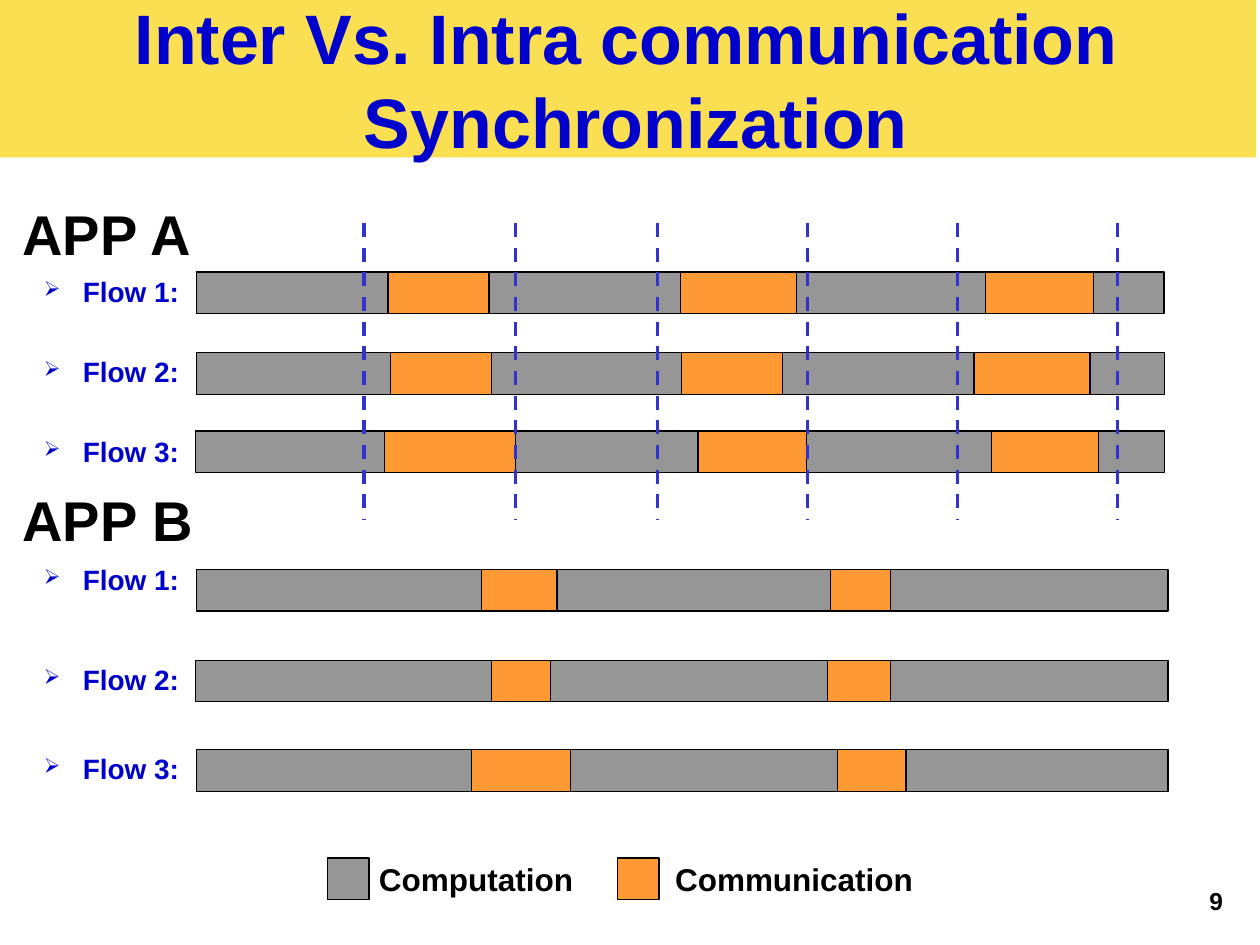
"""Build a slide comparing communication timing across two applications."""
from itertools import pairwise

from lxml import etree
from pptx import Presentation
from pptx.dml.color import RGBColor
from pptx.enum import dml, shapes, text
from pptx.oxml import ns
from pptx.util import Inches, Pt

BLACK = RGBColor(0x00, 0x00, 0x00)
BLUE = RGBColor(0x00, 0x00, 0xCC)
DASH_BLUE = RGBColor(0x33, 0x33, 0xCC)
YELLOW = RGBColor(0xFB, 0xDF, 0x53)
GREY = RGBColor(0x96, 0x96, 0x96)
ORANGE = RGBColor(0xFF, 0x99, 0x33)
BAR_HEIGHT = 0.33

deck = Presentation()
deck.slide_width, deck.slide_height = Inches(10), Inches(7.5)
page = deck.slides.add_slide(deck.slide_layouts[6])


def add_block(left, top, width, height, color, outlined=True):
    block = page.shapes.add_shape(
        shapes.MSO_SHAPE.RECTANGLE, Inches(left), Inches(top), Inches(width), Inches(height))
    block.shadow.inherit = False
    block.fill.solid()
    block.fill.fore_color.rgb = color
    if outlined:
        block.line.color.rgb = BLACK
        block.line.width = Pt(0.75)
    else:
        block.line.fill.background()
    return block


def add_span(para, words, size, color=BLACK):
    span = para.add_run()
    span.text = words
    span.font.name = "Arial"
    span.font.size = Pt(size)
    span.font.bold = True
    span.font.color.rgb = color


banner = add_block(-0.03, 0, 10, 1.25, YELLOW, outlined=False)
banner.text_frame.word_wrap = True
banner.text_frame.vertical_anchor = text.MSO_ANCHOR.MIDDLE
title = banner.text_frame.paragraphs[0]
title.alignment = text.PP_ALIGN.CENTER
add_span(title, "Inter Vs. Intra communication", 40, BLUE)
title.add_line_break()
add_span(title, " Synchronization", 40, BLUE)

flow_edges = {
    2.16: [1.56, 3.08, 3.88, 5.4, 6.32, 7.82, 8.68, 9.24],
    2.8: [1.56, 3.1, 3.9, 5.41, 6.21, 7.73, 8.65, 9.24],
    3.42: [1.55, 3.05, 4.09, 5.54, 6.4, 7.87, 8.72, 9.24],
    4.52: [1.56, 3.82, 4.42, 6.59, 7.07, 9.27],
    5.24: [1.55, 3.9, 4.37, 6.57, 7.07, 9.27],
    5.95: [1.56, 3.74, 4.53, 6.65, 7.19, 9.27],
}
for top, edges in flow_edges.items():
    for index, (start, end) in enumerate(pairwise(edges)):
        add_block(start, top, end - start, BAR_HEIGHT, ORANGE if index % 2 else GREY)

app_box = page.shapes.add_textbox(Inches(0.08), Inches(1.5), Inches(8.33), Inches(5.25))
app_frame = app_box.text_frame
app_frame.word_wrap = True
app_frame.margin_top = Inches(0.08)
app_a = app_frame.paragraphs[0]
add_span(app_a, "APP A", 32)
app_b = app_frame.add_paragraph()
app_b.space_before = Pt(125.5)
add_span(app_b, "APP B", 32)

flow_box = page.shapes.add_textbox(Inches(-0.25), Inches(2.13), Inches(2), Inches(5.25))
flow_frame = flow_box.text_frame
flow_frame.word_wrap = True
for index, gap in enumerate([0, 26.5, 26.5, 54.2, 37.6, 31.9]):
    para = flow_frame.add_paragraph() if index else flow_frame.paragraphs[0]
    para.space_before = Pt(gap)
    add_span(para, f"Flow {index % 3 + 1}:", 16, BLUE)
    properties = para._p.get_or_add_pPr()
    properties.set("marL", str(Inches(0.81)))
    properties.set("indent", str(Inches(-0.31)))
    etree.SubElement(properties, ns.qn("a:buSzPct")).set("val", "75000")
    etree.SubElement(properties, ns.qn("a:buChar")).set("char", "➢")

for left, color in [(2.6, GREY), (4.9, ORANGE)]:
    add_block(left, 6.81, BAR_HEIGHT, BAR_HEIGHT, color)
legend_box = page.shapes.add_textbox(Inches(2.91), Inches(6.78), Inches(5.47), Inches(0.4))
legend_box.text_frame.word_wrap = True
legend = legend_box.text_frame.paragraphs[0]
add_span(legend, "Computation\tCommunication", 18)
tab_list = etree.SubElement(legend._p.get_or_add_pPr(), ns.qn("a:tabLst"))
tab_stop = etree.SubElement(tab_list, ns.qn("a:tab"))
tab_stop.set("pos", str(Inches(2.35)))
tab_stop.set("algn", "l")

for x in [2.89, 4.09, 5.22, 6.41, 7.6, 8.87]:
    marker = page.shapes.add_connector(
        shapes.MSO_CONNECTOR.STRAIGHT, Inches(x), Inches(1.77), Inches(x), Inches(4.13))
    marker.line.color.rgb = DASH_BLUE
    marker.line.width = Pt(2)
    marker.line.dash_style = dml.MSO_LINE.DASH
    etree.SubElement(marker._element.spPr, ns.qn("a:effectLst"))

number_box = page.shapes.add_textbox(Inches(9.5), Inches(6.98), Inches(0.5), Inches(0.52))
number_box.text_frame.word_wrap = True
add_span(number_box.text_frame.paragraphs[0], "9", 14)

deck.save("out.pptx")
